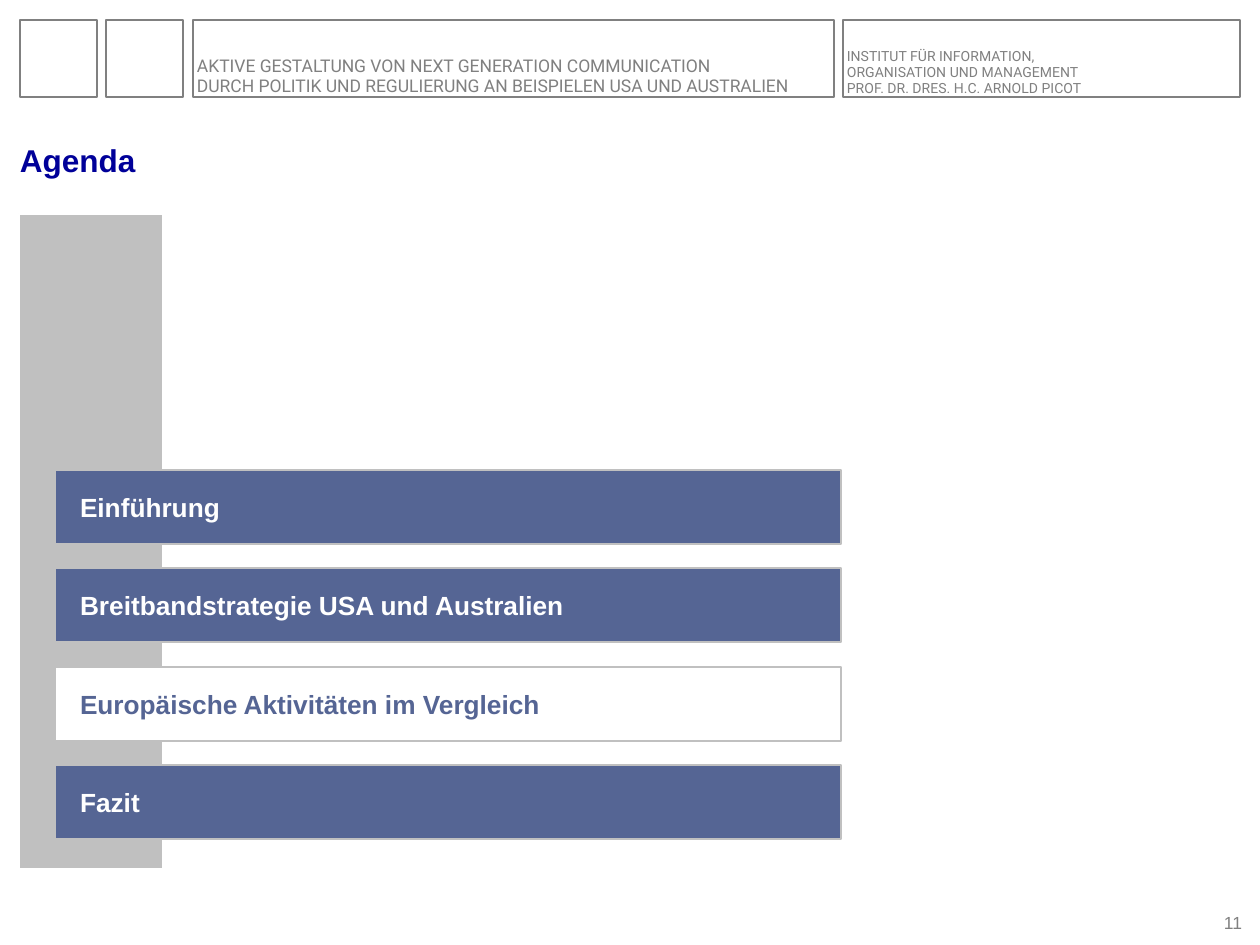
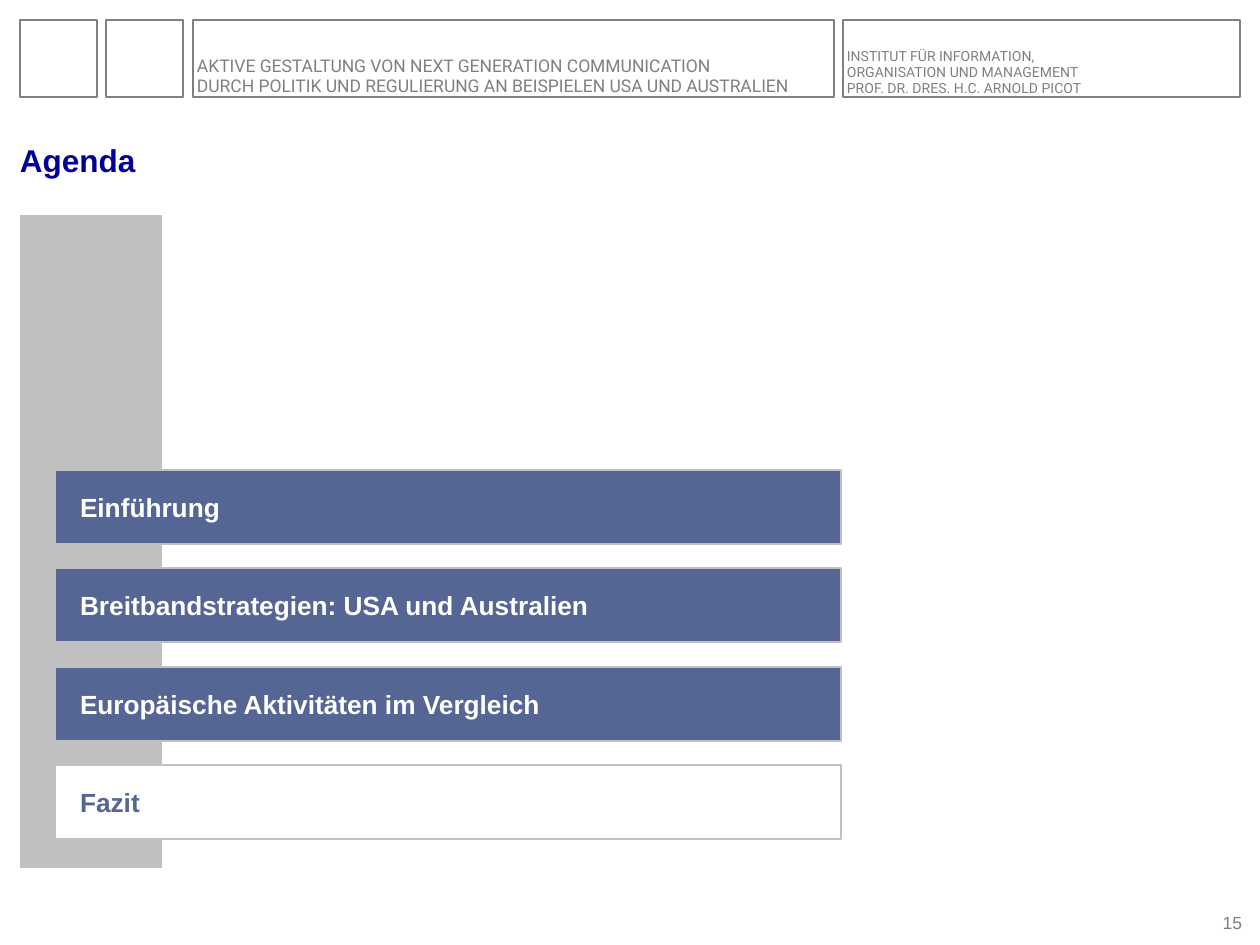
"""Build two agenda slides that highlight the current chapter."""
from dataclasses import dataclass

import pptx
import pptx.dml.color
import pptx.enum.shapes
import pptx.enum.text
import pptx.util

PX_PER_INCH = 126
GREY, SILVER, WHITE = "808080", "C0C0C0", "FFFFFF"
NAVY, SLATE = "000099", "556594"
ALIGN = pptx.enum.text.PP_ALIGN
ANCHOR = pptx.enum.text.MSO_ANCHOR


@dataclass(frozen=True)
class Box:
    """Place on the slide in px."""
    left: int
    top: int
    width: int
    height: int


@dataclass(frozen=True)
class TextStyle:
    """Look of one block of text."""
    size: int
    color: str
    font: str = "Arial"
    bold: bool = False
    align: ALIGN = ALIGN.LEFT
    anchor: ANCHOR = ANCHOR.BOTTOM
    line_spacing: float = 1.0


@dataclass(frozen=True)
class HeaderText:
    """Text in the header band."""
    box: Box
    size: int
    text: str


@dataclass(frozen=True)
class Agenda:
    """Content of one agenda slide."""
    page: int
    chapters: tuple[str, ...]
    current: int


HEADER_FRAMES = tuple(
    Box(left, 20, width, 77)
    for left, width in ((193, 641), (106, 77), (20, 77), (843, 397))
)
HEADER_TEXTS = (
    HeaderText(
        Box(197, 45, 638, 52), 10,
        "AKTIVE GESTALTUNG VON NEXT GENERATION COMMUNICATION\n"
        "DURCH POLITIK UND REGULIERUNG AN BEISPIELEN USA UND AUSTRALIEN",
    ),
    HeaderText(
        Box(847, 39, 328, 58), 8,
        "INSTITUT FÜR INFORMATION,\n"
        "ORGANISATION UND MANAGEMENT\n"
        "PROF. DR. DRES. H.C. ARNOLD PICOT",
    ),
)
TITLE_BOX = Box(20, 106, 1220, 73)
PAGE_BOX = Box(1207, 912, 35, 21)
SIDEBAR = Box(19, 214, 144, 655)
FIRST_CHAPTER = Box(55, 470, 786, 74)
LAST_CHAPTER_TOP = 765
CHAPTER_INDENT = 25

AGENDAS = (
    Agenda(11, ("Einführung", "Breitbandstrategie USA und Australien",
                "Europäische Aktivitäten im Vergleich", "Fazit"), 2),
    Agenda(15, ("Einführung", "Breitbandstrategien: USA und Australien",
                "Europäische Aktivitäten im Vergleich", "Fazit"), 3),
)


def px(length: int) -> int:
    """Turn px into EMU."""
    return round(length * pptx.util.Inches(1) / PX_PER_INCH)


def rgb(color: str) -> pptx.dml.color.RGBColor:
    """Turn a hex string into a colour."""
    return pptx.dml.color.RGBColor.from_string(color)


def extent(box: Box) -> tuple[int, int, int, int]:
    """Return the box in EMU."""
    return px(box.left), px(box.top), px(box.width), px(box.height)


def write(shape, text: str, style: TextStyle, indent: int = 0) -> None:
    """Write one styled paragraph into a shape."""
    frame = shape.text_frame
    frame.word_wrap = True
    frame.auto_size = pptx.enum.text.MSO_AUTO_SIZE.NONE
    frame.vertical_anchor = style.anchor
    frame.margin_left = px(indent)
    frame.margin_top = frame.margin_right = frame.margin_bottom = 0
    paragraph = frame.paragraphs[0]
    paragraph.text = text
    paragraph.alignment = style.align
    paragraph.line_spacing = style.line_spacing
    paragraph.font.name = style.font
    paragraph.font.size = pptx.util.Pt(style.size)
    paragraph.font.bold = style.bold
    paragraph.font.color.rgb = rgb(style.color)


def add_text(slide, box: Box, text: str, style: TextStyle) -> None:
    """Add a text box."""
    write(slide.shapes.add_textbox(*extent(box)), text, style)


def add_rectangle(slide, box: Box, line: str, weight: float, fill: str | None = None):
    """Add a rectangle, hollow unless a fill is given."""
    rectangle = slide.shapes.add_shape(
        pptx.enum.shapes.MSO_SHAPE.RECTANGLE, *extent(box))
    rectangle.shadow.inherit = False
    rectangle.line.color.rgb = rgb(line)
    rectangle.line.width = pptx.util.Pt(weight)
    if fill:
        rectangle.fill.solid()
        rectangle.fill.fore_color.rgb = rgb(fill)
    else:
        rectangle.fill.background()
    return rectangle


def add_frame(slide, title: str, page: int) -> None:
    """Draw the header band, title and page number."""
    for frame in HEADER_FRAMES:
        add_rectangle(slide, frame, GREY, 0.75)
    for header in HEADER_TEXTS:
        style = TextStyle(header.size, GREY, font="Roboto", line_spacing=0.95)
        add_text(slide, header.box, header.text, style)
    add_text(slide, PAGE_BOX, str(page), TextStyle(10, GREY, align=ALIGN.RIGHT))
    heading = slide.shapes.title
    heading.left, heading.top, heading.width, heading.height = extent(TITLE_BOX)
    write(heading, title, TextStyle(18, NAVY, bold=True))


def add_chapters(slide, agenda: Agenda) -> None:
    """Draw the sidebar and the evenly spaced chapter bars."""
    add_rectangle(slide, SIDEBAR, WHITE, 1.5, SILVER)
    first = FIRST_CHAPTER
    pitch = (LAST_CHAPTER_TOP - first.top) / (len(agenda.chapters) - 1)
    for index, chapter in enumerate(agenda.chapters):
        fill, ink = (WHITE, SLATE) if index == agenda.current else (SLATE, WHITE)
        box = Box(first.left, round(first.top + index * pitch), first.width, first.height)
        bar = add_rectangle(slide, box, SILVER, 1, fill)
        style = TextStyle(15, ink, bold=True, anchor=ANCHOR.MIDDLE)
        write(bar, chapter, style, CHAPTER_INDENT)


def main() -> None:
    """Build and save the slides."""
    presentation = pptx.Presentation()
    presentation.slide_width = px(1260)
    presentation.slide_height = px(945)
    title_only = presentation.slide_layouts[5]
    for agenda in AGENDAS:
        slide = presentation.slides.add_slide(title_only)
        add_frame(slide, "Agenda", agenda.page)
        add_chapters(slide, agenda)
    presentation.save("out.pptx")


if __name__ == "__main__":
    main()
